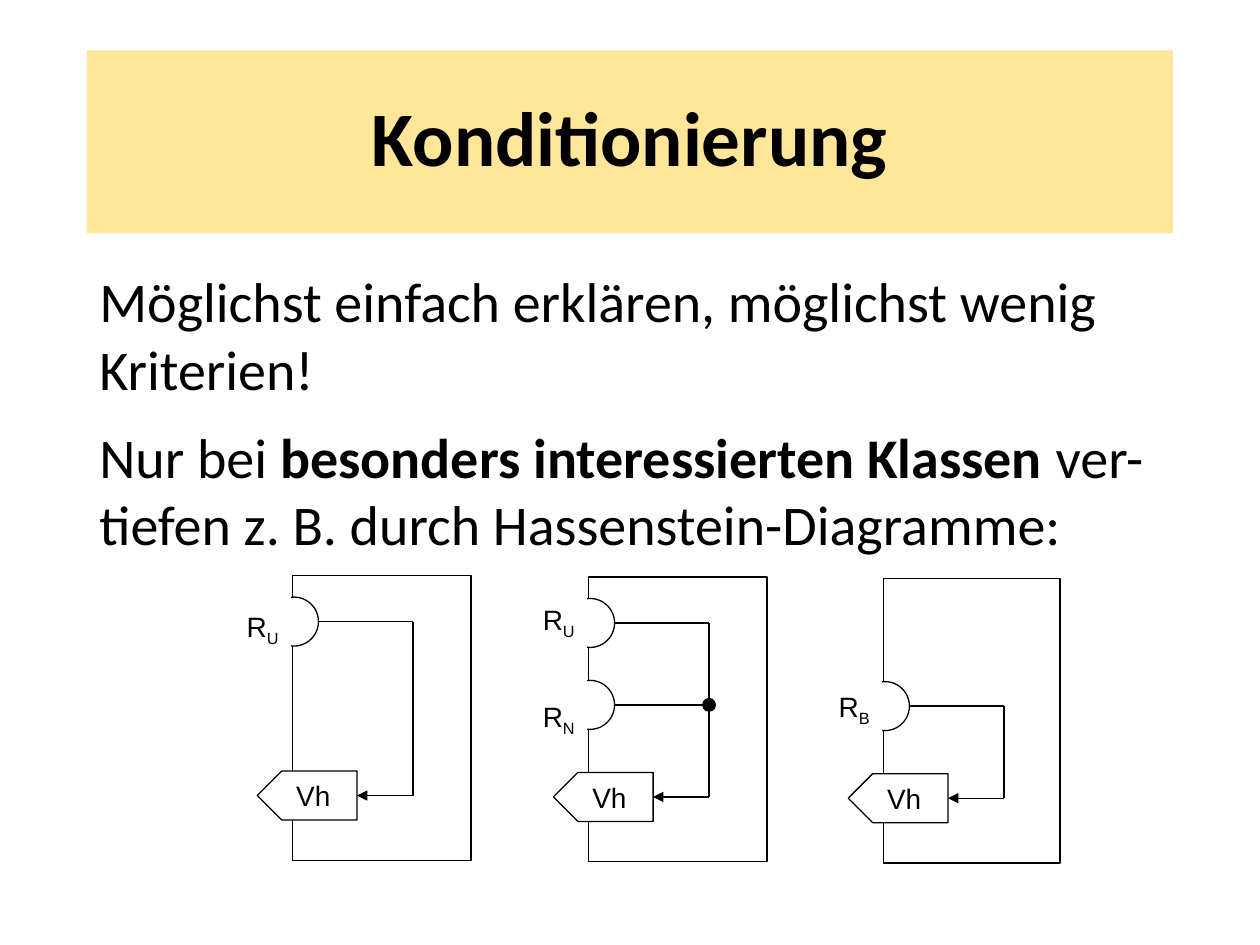
from pptx import Presentation
from pptx.dml.color import RGBColor
from pptx.enum.shapes import MSO_CONNECTOR as Connector, MSO_SHAPE as Shape
from pptx.enum.text import MSO_ANCHOR as Anchor, PP_ALIGN as Align
from pptx.oxml.ns import qn
from pptx.util import Pt
from lxml.etree import SubElement

COLORS = {"ink": "000000", "paper": "FFFFFF", "banner": "FFE699"}
RECEPTOR = 28
FRAME_HEIGHT = 162.7
PLATE_TOP, PLATE_WIDTH, PLATE_HEIGHT = 111.6, 57, 28
STEM = 69  # distance of the signal path from the frame's left side
UPPER, LOWER = 12.2, 59  # receptor tops inside the frame


def color(name):
    return RGBColor.from_string(COLORS[name])


def write(paragraph, text, font="Arial", size=16, bold=False, subscript=False):
    run = paragraph.add_run()
    run.text = text
    run.font.name = font
    run.font.size = Pt(size)
    run.font.bold = bold
    run.font.color.rgb = color("ink")
    if subscript:
        run.font._element.set("baseline", "-25000")


class Diagram:
    """Draws on one slide in a common black-on-white style."""

    def __init__(self, slide, line_width=0.75):
        self.slide = slide
        self.line_width = line_width

    def shape(self, kind, left, top, width, height, fill="paper", outlined=True):
        shape = self.slide.shapes.add_shape(
            kind, Pt(left), Pt(top), Pt(width), Pt(height))
        shape.shadow.inherit = False
        shape.fill.solid()
        shape.fill.fore_color.rgb = color(fill)
        if outlined:
            shape.line.color.rgb = color("ink")
            shape.line.width = Pt(self.line_width)
        else:
            shape.line.fill.background()
        return shape

    def title(self, text):
        banner = self.shape(Shape.RECTANGLE, 49.7, 28.8, 620.6, 104.4, "banner", False)
        paragraph = banner.text_frame.paragraphs[0]
        paragraph.alignment = Align.CENTER
        paragraph.line_spacing = 0.9
        write(paragraph, text, font="Calibri", size=44, bold=True)

    def body(self, paragraphs):
        """Each paragraph is a list of (text, bold) pairs."""
        frame = self.slide.shapes.add_textbox(
            Pt(49.7), Pt(149), Pt(620.6), Pt(225.4)).text_frame
        frame.word_wrap = True
        for index, parts in enumerate(paragraphs):
            paragraph = frame.add_paragraph() if index else frame.paragraphs[0]
            paragraph.space_after = Pt(12)
            for text, bold in parts:
                write(paragraph, text, font="Calibri", size=32, bold=bold)

    def line(self, x1, y1, x2, y2, arrow=False):
        line = self.slide.shapes.add_connector(
            Connector.STRAIGHT, Pt(x1), Pt(y1), Pt(x2), Pt(y2))
        line.line.color.rgb = color("ink")
        line.line.width = Pt(self.line_width)
        properties = line._element.spPr
        if arrow:
            SubElement(properties.find(qn("a:ln")), qn("a:tailEnd"), type="triangle")
        SubElement(properties, qn("a:effectLst"))

    def receptor(self, left, top, name, label_middle):
        """A half circle: the label's white box hides the part outside the frame."""
        self.shape(Shape.OVAL, left - 13, top, RECEPTOR, RECEPTOR)
        label = self.shape(Shape.RECTANGLE, left - 44.7, label_middle - 23,
                           44, 46, outlined=False)
        label.text_frame.vertical_anchor = Anchor.MIDDLE
        paragraph = label.text_frame.paragraphs[0]
        paragraph.alignment = Align.RIGHT
        write(paragraph, "R")
        write(paragraph, name, subscript=True)
        middle = top + RECEPTOR / 2
        self.line(left + 15, middle, left + STEM, middle)
        return middle

    def behaviour(self, left, top):
        plate = self.shape(Shape.PENTAGON, left, top, PLATE_WIDTH, PLATE_HEIGHT)
        plate.rotation = 180
        frame = plate.text_frame
        frame._txBody.bodyPr.set("rot", "10800000")  # keeps the text upright
        frame.margin_left = frame.margin_right = 0
        frame.margin_top = frame.margin_bottom = 0
        frame.vertical_anchor = Anchor.MIDDLE
        frame.paragraphs[0].alignment = Align.CENTER
        write(frame.paragraphs[0], "Vh")

    def organism(self, left, top, width, receptors):
        """Receptors are (name, offset from top, label's middle) triples."""
        self.shape(Shape.RECTANGLE, left, top, width, FRAME_HEIGHT)
        self.behaviour(left - 20, top + PLATE_TOP)
        inputs = [self.receptor(left, top + offset, name, label_middle)
                  for name, offset, label_middle in receptors]
        stem, output = left + STEM, top + PLATE_TOP + PLATE_HEIGHT / 2
        self.line(stem, inputs[0], stem, output)
        self.line(stem, output, left - 20 + PLATE_WIDTH, output, arrow=True)
        for junction in inputs[1:]:
            self.shape(Shape.OVAL, stem - 3.6, junction - 3.6, 7.2, 7.2, "ink")


def main():
    presentation = Presentation()
    presentation.slide_width, presentation.slide_height = Pt(720), Pt(540)
    diagram = Diagram(presentation.slides.add_slide(presentation.slide_layouts[6]))
    diagram.title("Konditionierung")
    diagram.body([
        [("Möglichst einfach erklären, möglichst wenig Kriterien!", False)],
        [("Nur bei ", False),
         ("besonders interessierten Klassen ", True),
         ("ver-tiefen z. B. durch Hassenstein-Diagramme:", False)],
    ])
    diagram.organism(167, 329, 102.2, [("U", UPPER, 359)])
    diagram.organism(336.2, 329.8, 102.2, [("U", UPPER, 355), ("N", LOWER, 410.5)])
    diagram.organism(504.7, 330.5, 101, [("B", LOWER, 405)])
    presentation.save("out.pptx")


if __name__ == "__main__":
    main()
